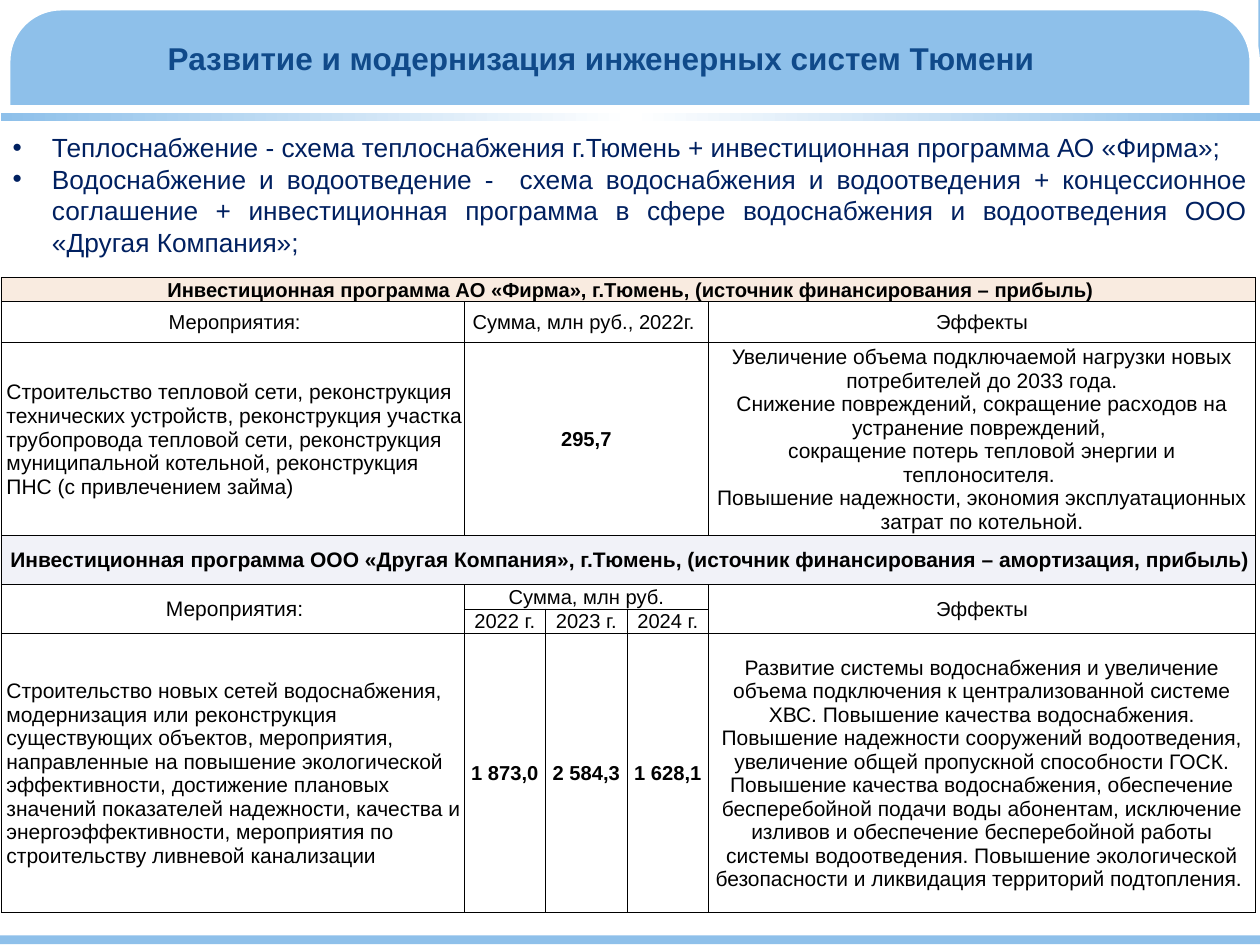
from lxml import etree
from pptx import Presentation
from pptx import util as u
from pptx.dml.color import RGBColor
from pptx.enum import shapes, text
from pptx.oxml.ns import qn

Pt = u.Pt
COLORS = {"blue": "8EC0EA", "white": "FFFFFF", "title": "104A8A", "list": "002060",
          "black": "000000", "peach": "F9EBE0", "lavender": "F1F2F8"}
CENTER, LEFT = text.PP_ALIGN.CENTER, text.PP_ALIGN.LEFT


def add_run(paragraph, content, size, color, bold=False):
    run = paragraph.add_run()
    run.text = content
    run.font.name = "Arial"
    run.font.size = Pt(size)
    run.font.bold = bold
    run.font.color.rgb = RGBColor.from_string(COLORS[color])


def paint(shape, color):
    shape.shadow.inherit = False
    shape.fill.solid()
    shape.fill.fore_color.rgb = RGBColor.from_string(COLORS[color])
    shape.line.fill.background()


presentation = Presentation()
presentation.slide_width, presentation.slide_height = Pt(720), Pt(540)
slide = presentation.slides.add_slide(presentation.slide_layouts[1])
title, body = slide.placeholders

header = slide.shapes.add_shape(shapes.MSO_SHAPE.RECTANGLE, 0, 0, Pt(720), Pt(60))
paint(header, "blue")

frame = slide.shapes.add_shape(shapes.MSO_SHAPE.ROUNDED_RECTANGLE, Pt(3), Pt(3), Pt(714), Pt(534))
frame.shadow.inherit = False
frame.adjustments[0] = 0.06
frame.fill.background()
frame.line.color.rgb = RGBColor.from_string(COLORS["white"])
frame.line.width = Pt(6)

corners = [
    [(0, 35), (9, 18), (20, 4), (35, 0), (0, 0)],
    [(30, 540), (15, 528), (4, 516), (0, 498), (0, 540)],
    [(720, 503), (711, 521), (702, 535), (689, 539), (720, 539)],
    [(684, 0), (702, 10), (715, 20), (719, 36), (719, 0)],
]
for points in corners:
    builder = slide.shapes.build_freeform(*points[0], scale=Pt(1))
    builder.add_line_segments(points[1:], close=True)
    paint(builder.convert_to_shape(), "white")

footer_bar = slide.shapes.add_shape(shapes.MSO_SHAPE.RECTANGLE, 0, Pt(534.5), Pt(720), Pt(5))
paint(footer_bar, "blue")

divider = slide.shapes.add_shape(shapes.MSO_SHAPE.RECTANGLE, Pt(0.5), Pt(64.5), Pt(720), Pt(5))
paint(divider, "blue")
divider.fill.gradient()
divider.fill.gradient_angle = 0
stops = divider.fill._fill._gradFill.find(qn("a:gsLst"))
for stop in list(stops):
    stops.remove(stop)
for position, color in [(0, "blue"), (50000, "white"), (100000, "blue")]:
    stop = etree.SubElement(stops, qn("a:gs"), pos=str(position))
    etree.SubElement(stop, qn("a:srgbClr"), val=COLORS[color])

title.left, title.top, title.width, title.height = Pt(20), Pt(21), Pt(647), Pt(23)
title_frame = title.text_frame
title_frame.auto_size = text.MSO_AUTO_SIZE.NONE
title_frame.vertical_anchor = text.MSO_ANCHOR.BOTTOM
title_frame.margin_left = title_frame.margin_right = title_frame.margin_bottom = 0
title_frame.paragraphs[0].alignment = CENTER
add_run(title_frame.paragraphs[0], "Развитие и модернизация инженерных систем Тюмени", 18, "title", True)

column_widths = [264.5, 46.6, 46.6, 46.6, 312.5]
row_heights = [13.9, 23.4, 110.2, 28.1, 13.9, 13.9, 159.8]
graphic = slide.shapes.add_table(7, 5, Pt(0.7), Pt(158.5), Pt(sum(column_widths)), Pt(sum(row_heights)))
table = graphic.table
table.first_row = table.horz_banding = False
for column, width in zip(table.columns, column_widths):
    column.width = Pt(width)
for row, height in zip(table.rows, row_heights):
    row.height = Pt(height)

for first, last in [((0, 0), (0, 4)), ((1, 1), (1, 3)), ((2, 1), (2, 3)), ((3, 0), (3, 4)),
                    ((4, 0), (5, 0)), ((4, 1), (4, 3)), ((4, 4), (5, 4))]:
    table.cell(*first).merge(table.cell(*last))

cell_texts = [
    (0, 0, 11.5, True, CENTER, ["Инвестиционная программа АО «Фирма», г.Тюмень, (источник финансирования – прибыль)"]),
    (1, 0, 11.5, False, CENTER, ["Мероприятия:"]),
    (1, 1, 11.5, False, CENTER, ["Сумма, млн руб., 2022г. "]),
    (1, 4, 11.5, False, CENTER, ["Эффекты"]),
    (2, 0, 12, False, LEFT, ["Строительство тепловой сети, реконструкция технических устройств, реконструкция участка трубопровода тепловой сети, реконструкция муниципальной котельной, реконструкция ПНС (с привлечением займа)"]),
    (2, 1, 11.5, True, CENTER, ["295,7"]),
    (2, 4, 12, False, CENTER, [
        "Увеличение объема подключаемой нагрузки новых потребителей до 2033 года.",
        "Снижение повреждений, сокращение расходов на устранение повреждений, \nсокращение потерь тепловой энергии и теплоносителя. ",
        "Повышение надежности, экономия эксплуатационных затрат по котельной."]),
    (3, 0, 12, True, CENTER, ["Инвестиционная программа ООО «Другая Компания», г.Тюмень, (источник финансирования – амортизация, прибыль)"]),
    (4, 0, 12, False, CENTER, ["Мероприятия:"]),
    (4, 1, 11.5, False, CENTER, ["Сумма, млн руб."]),
    (4, 4, 11.5, False, CENTER, ["Эффекты"]),
    (5, 1, 11.5, False, CENTER, ["2022 г."]),
    (5, 2, 11.5, False, CENTER, ["2023 г."]),
    (5, 3, 11.5, False, CENTER, ["2024 г."]),
    (6, 0, 12, False, LEFT, ["Строительство новых сетей водоснабжения, модернизация или реконструкция существующих объектов, мероприятия, направленные на повышение экологической эффективности, достижение плановых значений показателей надежности, качества и энергоэффективности, мероприятия по строительству ливневой канализации"]),
    (6, 1, 11.5, True, CENTER, ["1 873,0"]),
    (6, 2, 11.5, True, CENTER, ["2 584,3"]),
    (6, 3, 11.5, True, CENTER, ["1 628,1"]),
    (6, 4, 12, False, CENTER, ["Развитие системы водоснабжения и увеличение объема подключения к централизованной системе ХВС. Повышение качества водоснабжения. Повышение надежности сооружений водоотведения, увеличение общей пропускной способности ГОСК. Повышение качества водоснабжения, обеспечение бесперебойной подачи воды абонентам, исключение изливов и обеспечение бесперебойной работы системы водоотведения. Повышение экологической безопасности и ликвидация территорий подтопления. "]),
]
for row, column, size, bold, alignment, lines in cell_texts:
    cell_frame = table.cell(row, column).text_frame
    for index, line in enumerate(lines):
        paragraph = cell_frame.add_paragraph() if index else cell_frame.paragraphs[0]
        paragraph.alignment = alignment
        for part_index, part in enumerate(line.split("\n")):
            if part_index:
                paragraph.add_line_break()
            add_run(paragraph, part, size, "black", bold)

fills = {0: "peach", 3: "lavender"}
for row in range(7):
    for column in range(5):
        cell = table.cell(row, column)
        cell.vertical_anchor = text.MSO_ANCHOR.MIDDLE
        cell.margin_left = Pt(0.7 if column else 3)
        cell.margin_top = cell.margin_right = Pt(0.7)
        cell.margin_bottom = 0
        properties = cell._tc.get_or_add_tcPr()
        for side in ("a:lnL", "a:lnR", "a:lnT", "a:lnB"):
            border = etree.SubElement(properties, qn(side), w=str(Pt(0.5)))
            border_fill = etree.SubElement(border, qn("a:solidFill"))
            etree.SubElement(border_fill, qn("a:srgbClr"), val=COLORS["black"])
        if row in fills:
            cell.fill.solid()
            cell.fill.fore_color.rgb = RGBColor.from_string(COLORS[fills[row]])
        else:
            cell.fill.background()

body.left, body.top, body.width, body.height = 0, Pt(71.5), Pt(720), Pt(80)
body_frame = body.text_frame
body_frame.auto_size = text.MSO_AUTO_SIZE.NONE
programs = [
    "Теплоснабжение - схема теплоснабжения г.Тюмень + инвестиционная программа АО «Фирма»; ",
    "Водоснабжение и водоотведение -  схема водоснабжения и водоотведения + концессионное соглашение + инвестиционная программа в сфере водоснабжения и водоотведения ООО «Другая Компания»;",
]
for index, program in enumerate(programs):
    paragraph = body_frame.add_paragraph() if index else body_frame.paragraphs[0]
    paragraph.alignment = text.PP_ALIGN.JUSTIFY
    paragraph.space_before = Pt(0)
    properties = paragraph._p.get_or_add_pPr()
    properties.set("marL", str(Pt(22.5)))
    properties.set("indent", str(Pt(-22.5)))
    etree.SubElement(properties, qn("a:buFont"), typeface="Arial")
    etree.SubElement(properties, qn("a:buChar"), char="•")
    add_run(paragraph, program, 15, "list")

for placeholder in (title, body):
    slide.shapes._spTree.append(placeholder._element)

presentation.save("out.pptx")
